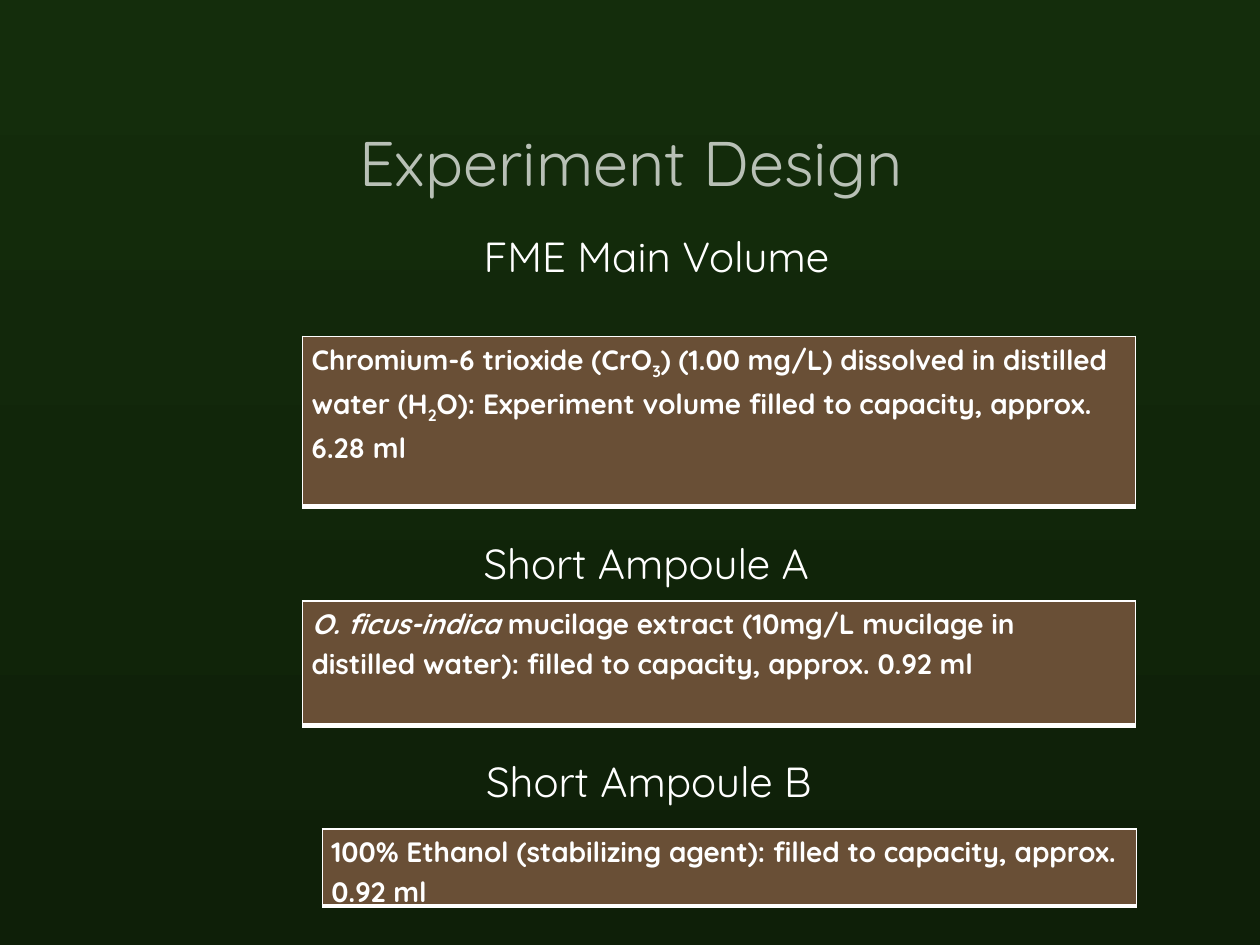
from dataclasses import dataclass

from lxml import etree
from pptx import Presentation
from pptx.dml.color import RGBColor
from pptx.enum.text import MSO_ANCHOR
from pptx.oxml.ns import qn
from pptx.util import Cm, Pt

# Content: (text, style) runs; places are left, top, width, height in cm
TITLE = ("Experiment Design", (6.99, 0.97, 17.15, 3.17))
SECTIONS = [
    {
        "heading": "FME Main Volume",
        "heading_at": (9.5, 4.52, 11.81, 1.27),
        "details": [
            ("Chromium-6 trioxide (CrO", ""), ("3", "sub"),
            (") (1.00 mg/L) dissolved in distilled water (H", ""), ("2", "sub"),
            ("O): Experiment volume filled to capacity, approx. 6.28 ml", ""),
        ],
        "details_at": (6.1, 6.78, 16.79, 3.43),
    },
    {
        "heading": "Short Ampoule A",
        "heading_at": (9.5, 10.72, 11.81, 1.27),
        "details": [
            ("O. ficus-indica ", "italic"),
            ("mucilage extract (10mg/L mucilage in distilled water): "
             "filled to capacity, approx. 0.92 ml", ""),
        ],
        "details_at": (6.1, 12.12, 16.79, 2.5),
    },
    {
        "heading": "Short Ampoule B",
        "heading_at": (9.55, 15.11, 11.94, 1.27),
        "details": [
            ("100% Ethanol (stabilizing agent): "
             "filled to capacity, approx. 0.92 ml", ""),
        ],
        "details_at": (6.5, 16.71, 16.41, 1.55),
    },
]


@dataclass(frozen=True)
class Theme:
    font: str = "Quicksand"
    top: str = "142D0C"
    bottom: str = "0E1F08"
    title: str = "B8C0B6"
    text: str = "FFFFFF"
    panel: str = "694F36"
    title_size: int = 36
    heading_size: int = 24
    details_size: int = 16


THEME = Theme()


def write(frame, runs, *, size, color=THEME.text, bold=False, spacing=None):
    """Fill a text frame with one paragraph of styled runs."""
    frame.word_wrap = True
    paragraph = frame.paragraphs[0]
    if spacing:
        paragraph.line_spacing = spacing
    for text, style in runs:
        run = paragraph.add_run()
        run.text = text
        font = run.font
        font.name, font.size, font.bold = THEME.font, Pt(size), bold
        font.italic = style == "italic"
        font.color.rgb = RGBColor.from_string(color)
        if style == "sub":
            run._r.get_or_add_rPr().set("baseline", "-25000")


def add_label(slide, text, place, anchor=MSO_ANCHOR.TOP, **text_format):
    frame = slide.shapes.add_textbox(*map(Cm, place)).text_frame
    frame.vertical_anchor = anchor
    write(frame, [(text, "")], **text_format)


def add_border(cell, side, width):
    line = etree.SubElement(cell._tc.get_or_add_tcPr(), qn(f"a:ln{side}"), w=str(Pt(width)))
    fill = etree.SubElement(line, qn("a:solidFill"))
    etree.SubElement(fill, qn("a:srgbClr"), val=THEME.text)


def add_panel(slide, runs, place):
    table = slide.shapes.add_table(1, 1, *map(Cm, place)).table
    table.first_row = table.horz_banding = False
    cell = table.cell(0, 0)
    cell.margin_left = cell.margin_right = Cm(0.18)
    cell.margin_top = cell.margin_bottom = 0
    for side, width in (("L", 1), ("R", 1), ("T", 1), ("B", 3)):
        add_border(cell, side, width)
    cell.fill.solid()
    cell.fill.fore_color.rgb = RGBColor.from_string(THEME.panel)
    write(cell.text_frame, runs, size=THEME.details_size, bold=True, spacing=1.15)


def main():
    deck = Presentation()
    deck.slide_width, deck.slide_height = Cm(25.4), Cm(19.05)
    slide = deck.slides.add_slide(deck.slide_layouts[6])

    # Background, dark green from top to bottom
    backdrop = slide.background.fill
    backdrop.gradient()
    backdrop.gradient_angle = 270
    for stop, position, color in zip(backdrop.gradient_stops, (0, 1), (THEME.top, THEME.bottom)):
        stop.position = position
        stop.color.rgb = RGBColor.from_string(color)

    # Title
    add_label(slide, *TITLE, anchor=MSO_ANCHOR.BOTTOM, size=THEME.title_size, color=THEME.title)

    # Headings with their panels
    for section in SECTIONS:
        add_panel(slide, section["details"], section["details_at"])
        add_label(slide, section["heading"], section["heading_at"], size=THEME.heading_size)

    deck.save("out.pptx")


if __name__ == "__main__":
    main()
